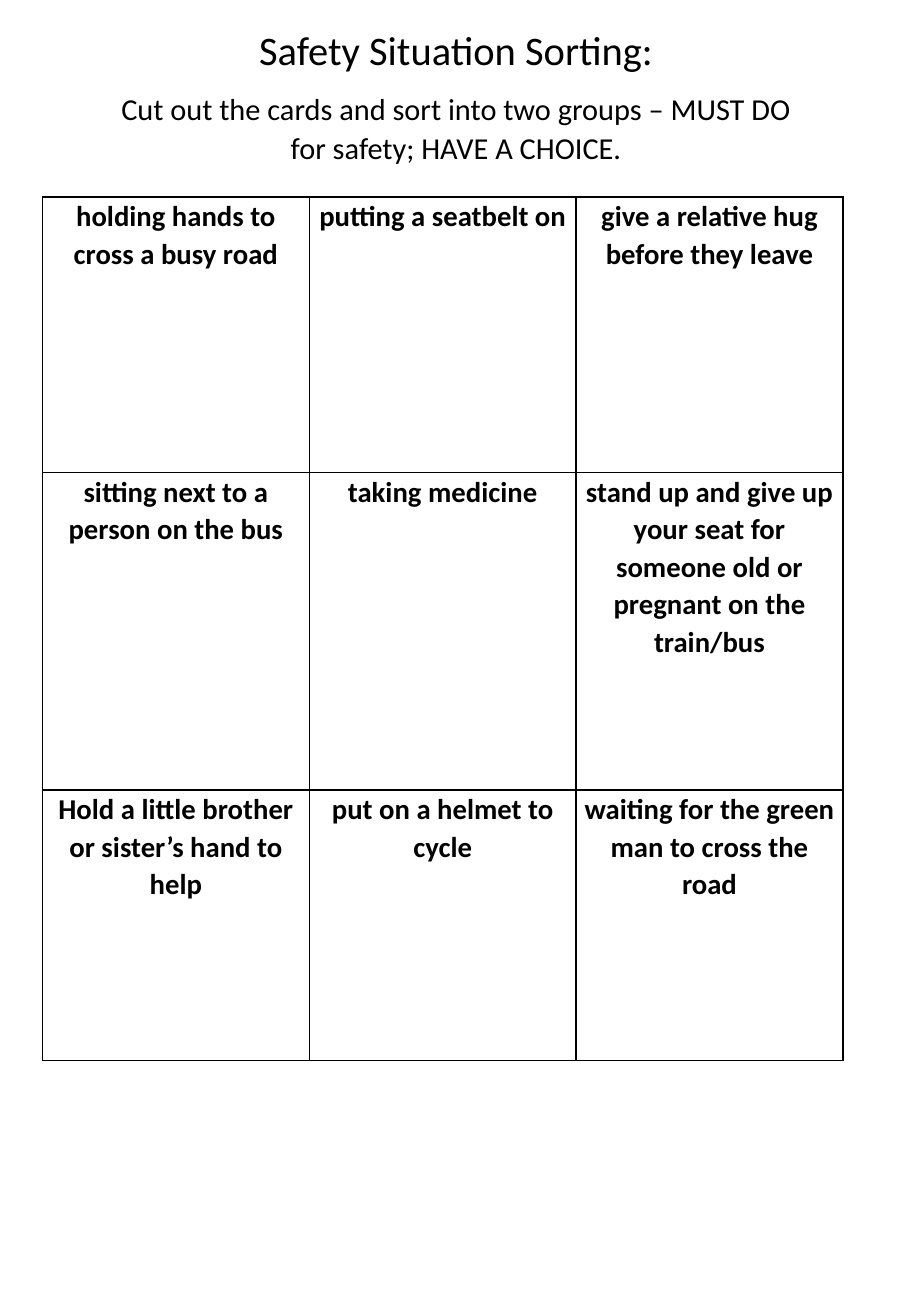
from pptx import Presentation
from pptx.dml.color import RGBColor
from pptx.enum.text import MSO_AUTO_SIZE, PP_ALIGN
from pptx.oxml import parse_xml
from pptx.oxml.ns import nsdecls
from pptx.util import Inches, Pt

COLORS = {"ink": "000000"}
FONT = "Calibri"
CARDS = [
    ["holding hands to cross a busy road",
     "putting a seatbelt on",
     "give a relative hug before they leave"],
    ["sitting next to a person on the bus",
     "taking medicine",
     "stand up and give up your seat for someone old or pregnant on the train/bus"],
    ["Hold a little brother or sister’s hand to help",
     "put on a helmet to cycle",
     "waiting for the green man to cross the road"],
]
HEIGHTS = [2.27, 2.61, 2.23]


def style(para, size, bold=False):
    para.alignment = PP_ALIGN.CENTER
    para.line_spacing = 1.07
    for run in para.runs:
        run.font.name = FONT
        run.font.size = Pt(size)
        run.font.bold = bold
        run.font.color.rgb = RGBColor.from_string(COLORS["ink"])


def outline(cell):
    props = cell._tc.get_or_add_tcPr()
    for spot, side in enumerate(("lnL", "lnR", "lnT", "lnB")):
        props.insert(spot, parse_xml(
            f'<a:{side} {nsdecls("a")} w="{Pt(1)}"><a:solidFill>'
            f'<a:srgbClr val="{COLORS["ink"]}"/></a:solidFill></a:{side}>'))


# Page
deck = Presentation()
deck.slide_width = Inches(7.5)
deck.slide_height = Inches(10.83)
slide = deck.slides.add_slide(deck.slide_layouts[6])

# Cards to cut out
frame = slide.shapes.add_table(
    3, 3, Inches(0.35), Inches(1.62), Inches(6.59), Inches(sum(HEIGHTS)))
table = frame.table
table.first_row = False
table.horz_banding = False
for row, height, texts in zip(table.rows, HEIGHTS, CARDS):
    row.height = Inches(height)
    for cell, text in zip(row.cells, texts):
        cell.margin_left = cell.margin_right = Inches(0.06)
        cell.margin_top = cell.margin_bottom = 0
        cell.fill.background()
        outline(cell)
        cell.text_frame.text = text
        style(cell.text_frame.paragraphs[0], 17, True)

# Title and task
box = slide.shapes.add_textbox(
    Inches(0.77), Inches(0.13), Inches(5.97), Inches(1.28))
body = box.text_frame
body.word_wrap = True
body.auto_size = MSO_AUTO_SIZE.SHAPE_TO_FIT_TEXT
body.text = ("Safety Situation Sorting:\n"
             "Cut out the cards and sort into two groups – MUST DO "
             "for safety; HAVE A CHOICE.")
for para, size in zip(body.paragraphs, (24, 18)):
    style(para, size)
    para.space_after = Pt(8)

deck.save("out.pptx")
